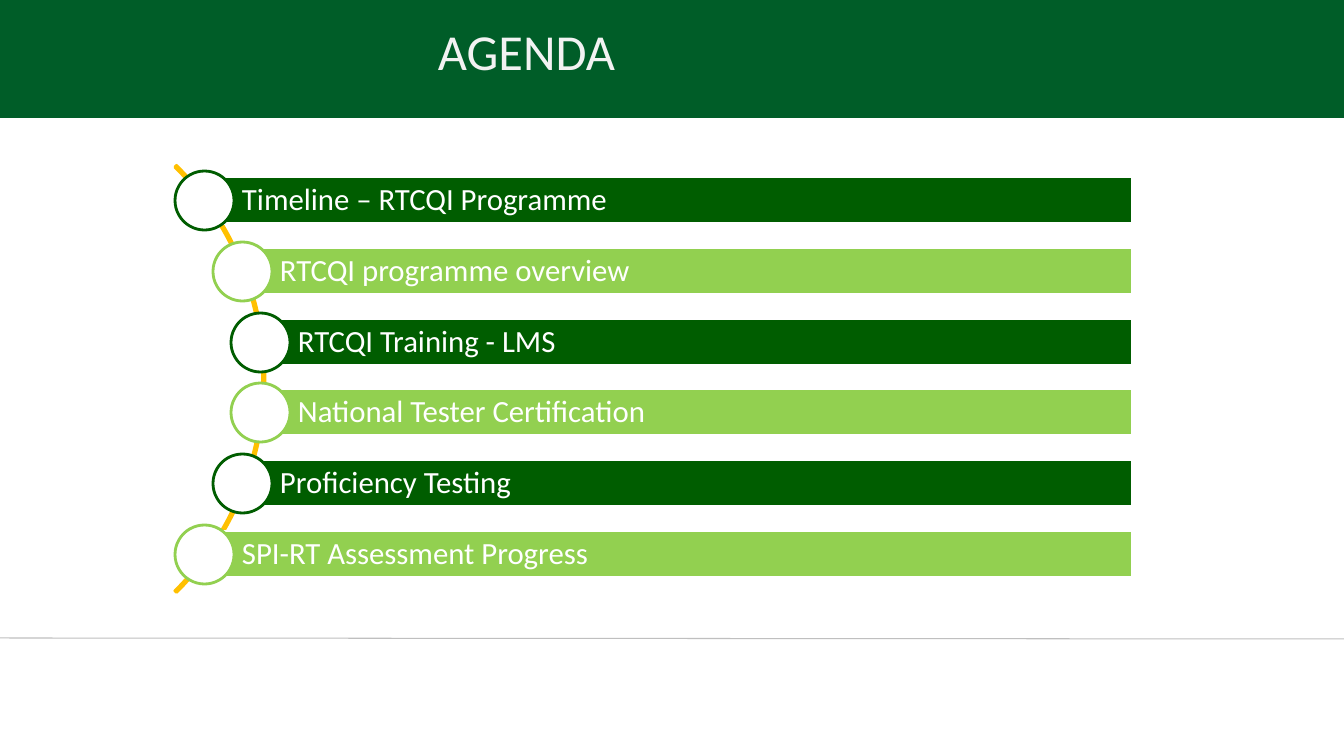
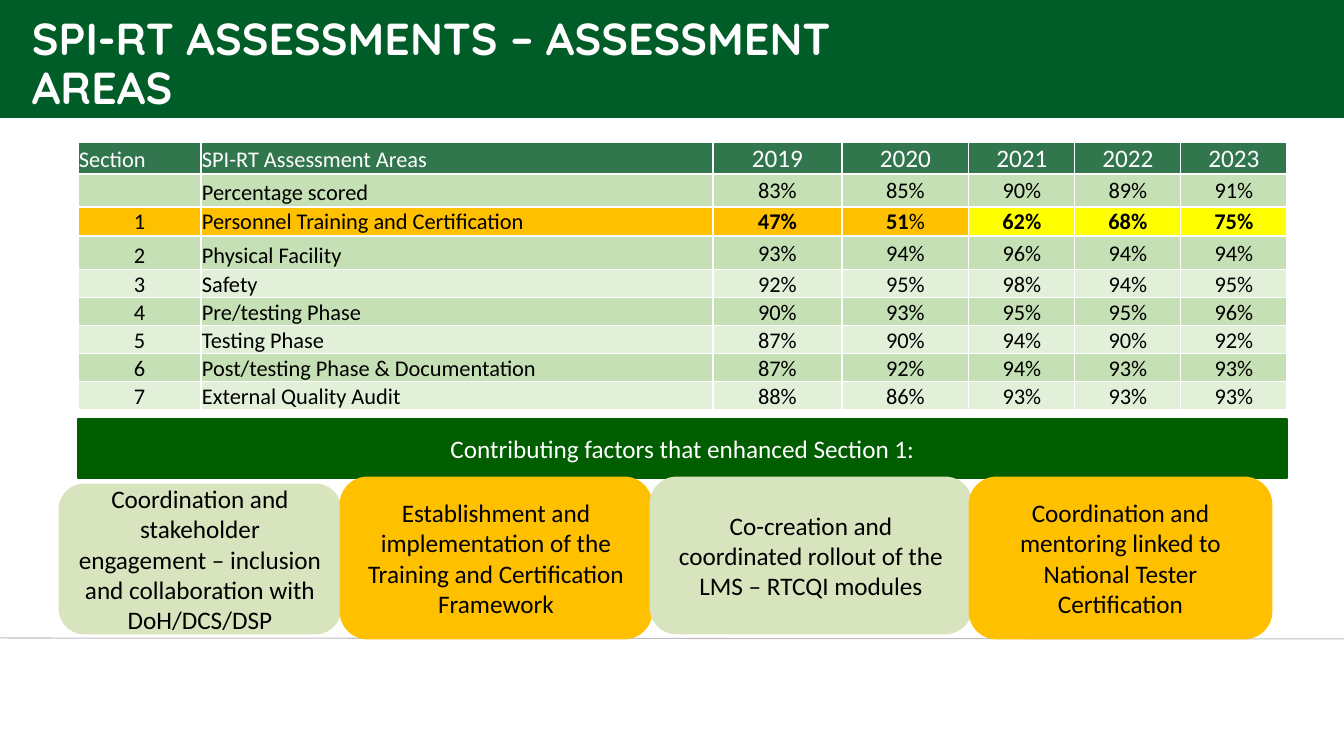
import dataclasses

import lxml.etree
import pptx
import pptx.dml.color
import pptx.enum.shapes
import pptx.enum.text
import pptx.oxml.ns
import pptx.util


@dataclasses.dataclass(frozen=True)
class Theme:
    # Colours
    band: str = "005D28"
    rule: str = "BFBFBF"
    dark: str = "005D00"
    light: str = "92D050"
    amber: str = "FFC000"
    yellow: str = "FFFF00"
    sage: str = "D7E4BD"
    header: str = "32764E"
    row_odd: str = "C5E0B4"
    row_even: str = "E2F0D9"
    white: str = "FFFFFF"
    black: str = "000000"
    off_white: str = "F2F2F2"
    # Fonts and type sizes
    body: str = "Calibri"
    display: str = "Quicksand"
    agenda_title: int = 36
    title: int = 32
    item: int = 22
    text: int = 18
    cell: int = 16


T = Theme()
PX = 12192000 / 1344
RGB = pptx.dml.color.RGBColor.from_string
MSO = pptx.enum.shapes.MSO_SHAPE
LEFT = pptx.enum.text.PP_ALIGN.LEFT
CENTER = pptx.enum.text.PP_ALIGN.CENTER
MIDDLE = pptx.enum.text.MSO_ANCHOR.MIDDLE
BOTTOM = pptx.enum.text.MSO_ANCHOR.BOTTOM
qn = pptx.oxml.ns.qn


def add_box(s, kind, box, fill=None, line=None):
    sp = s.shapes.add_shape(kind, *[round(v * PX) for v in box])
    sp.shadow.inherit = False
    if fill:
        sp.fill.solid()
        sp.fill.fore_color.rgb = RGB(fill)
    else:
        sp.fill.background()
    if line:
        sp.line.color.rgb = RGB(line)
        sp.line.width = pptx.util.Pt(2)
    else:
        sp.line.fill.background()
    return sp


def set_text(tf, text, size, color, align=LEFT, font=T.body, bold=False):
    tf.word_wrap = True
    p = tf.paragraphs[0]
    p.text = text
    p.alignment = align
    for r in p.runs:
        r.font.name = font
        r.font.size = pptx.util.Pt(size)
        r.font.bold = bold
        r.font.color.rgb = RGB(color)
    return p


prs = pptx.Presentation()
prs.slide_width = round(1344 * PX)
prs.slide_height = round(756 * PX)

# Shared band, footer rule and title
titles = [
    ("AGENDA", (-29, 15, 1111, 72), T.agenda_title, T.off_white, CENTER, T.body, False),
    ("SPI-RT ASSESSMENTS – ASSESSMENT AREAS", (22, 12, 918, 100), T.title, T.white,
     LEFT, T.display, True),
]
for text, box, size, color, align, font, bold in titles:
    s = prs.slides.add_slide(prs.slide_layouts[6])
    add_box(s, MSO.RECTANGLE, (0, 0, 1344, 118), T.band)
    rule = s.shapes.add_connector(pptx.enum.shapes.MSO_CONNECTOR.STRAIGHT,
                                  0, round(638 * PX), prs.slide_width, round(639 * PX))
    rule.line.color.rgb = RGB(T.rule)
    rule.line.width = pptx.util.Pt(0.75)
    lxml.etree.SubElement(rule._element.spPr, qn("a:effectLst"))
    title = s.shapes.add_textbox(*[round(v * PX) for v in box])
    p = set_text(title.text_frame, text, size, color, align, font, bold)
    if font == T.display:
        p.line_spacing = 0.9
agenda, areas = prs.slides

# Agenda: arc behind the items
arc = add_box(agenda, MSO.BLOCK_ARC, (-339, 77, 604, 604), line=T.amber)
for i, value in enumerate((189, 27, 0.004)):
    arc.adjustments[i] = value

# Agenda: bars with a circle at the left end
items = [
    (205, "Timeline – RTCQI Programme"),
    (243, "RTCQI programme overview"),
    (261, "RTCQI Training - LMS"),
    (261, "National Tester Certification"),
    (243, "Proficiency Testing"),
    (205, "SPI-RT Assessment Progress"),
]
for i, (x, text) in enumerate(items):
    y = 177 + round(i * 70.8)
    color = T.light if i % 2 else T.dark
    bar = add_box(agenda, MSO.RECTANGLE, (x, y, 1132 - x, 47), color, T.white)
    tf = bar.text_frame
    tf.vertical_anchor = MIDDLE
    tf.margin_left = round(37 * PX)
    tf.margin_right = tf.margin_top = tf.margin_bottom = round(6 * PX)
    set_text(tf, text, T.item, T.white).line_spacing = 0.9
    add_box(agenda, MSO.OVAL, (x - 30, y - 6, 59, 59), T.white, color)

# Assessment table
rows = [
    ("Section", "SPI-RT Assessment Areas", "2019", "2020", "2021", "2022", "2023"),
    ("", "Percentage scored", "83%", "85%", "90%", "89%", "91%"),
    ("1", "Personnel Training and Certification", "47%", "51%", "62%", "68%", "75%"),
    ("2", "Physical Facility", "93%", "94%", "96%", "94%", "94%"),
    ("3", "Safety", "92%", "95%", "98%", "94%", "95%"),
    ("4", "Pre/testing Phase", "90%", "93%", "95%", "95%", "96%"),
    ("5", "Testing Phase", "87%", "90%", "94%", "90%", "92%"),
    ("6", "Post/testing Phase & Documentation", "87%", "92%", "94%", "93%", "93%"),
    ("7", "External Quality Audit", "88%", "86%", "93%", "93%", "93%"),
]
widths = [123, 512, 129, 127, 106, 106, 106]
heights = [32, 33, 29, 34] + [28] * 5
highlight = 2
frame = areas.shapes.add_table(len(rows), len(widths), round(78 * PX), round(142 * PX),
                               round(sum(widths) * PX), round(sum(heights) * PX))
table = frame.table
for col, width in zip(table.columns, widths):
    col.width = round(width * PX)
for i, (values, height) in enumerate(zip(rows, heights)):
    table.rows[i].height = round(height * PX)
    for j, text in enumerate(values):
        cell = table.cell(i, j)
        cell.margin_left = cell.margin_right = cell.margin_top = round(PX)
        cell.margin_bottom = 0
        cell.vertical_anchor = MIDDLE if i and j > 1 else BOTTOM
        centred = j > 1 or (i and j == 0)
        p = set_text(cell.text_frame, text,
                     T.text if i == 0 and j > 1 else T.cell,
                     T.black if i else T.white,
                     CENTER if centred else LEFT,
                     bold=i == highlight and j > 1)

        # White grid lines
        tcPr = cell._tc.get_or_add_tcPr()
        for side in ("a:lnL", "a:lnR", "a:lnT", "a:lnB"):
            ln = lxml.etree.SubElement(tcPr, qn(side), w="12700")
            solid = lxml.etree.SubElement(ln, qn("a:solidFill"))
            lxml.etree.SubElement(solid, qn("a:srgbClr"), val=T.white)

        if i == 0:
            fill = T.header
        elif i == highlight:
            fill = T.yellow if j > 3 else T.amber
        else:
            fill = T.row_odd if i % 2 else T.row_even
        cell.fill.solid()
        cell.fill.fore_color.rgb = RGB(fill)

# The 2020 score of the highlighted row has a regular percent sign
p = set_text(table.cell(highlight, 3).text_frame, "51", T.cell, T.black, CENTER, bold=True)
r = p.add_run()
r.text = "%"
r.font.name = T.body
r.font.size = pptx.util.Pt(T.cell)
r.font.color.rgb = RGB(T.black)

# Contributing factors: heading bar and four cards
factors = [
    (MSO.RECTANGLE, (78, 419, 1209, 59), T.dark, T.white,
     "Contributing factors that enhanced Section 1:"),
    (MSO.ROUNDED_RECTANGLE, (60, 485, 280, 148), T.sage, T.black,
     "Coordination and stakeholder engagement – inclusion and collaboration with DoH/DCS/DSP"),
    (MSO.ROUNDED_RECTANGLE, (341, 478, 310, 160), T.amber, T.black,
     "Establishment and implementation of the Training and Certification Framework"),
    (MSO.ROUNDED_RECTANGLE, (651, 478, 320, 155), T.sage, T.black,
     "Co-creation and coordinated rollout of the LMS – RTCQI modules"),
    (MSO.ROUNDED_RECTANGLE, (970, 478, 301, 160), T.amber, T.black,
     "Coordination and mentoring linked to National Tester Certification"),
]
for kind, box, fill, color, text in factors:
    sp = add_box(areas, kind, box, fill, fill)
    sp.text_frame.vertical_anchor = MIDDLE
    set_text(sp.text_frame, text, T.text, color, CENTER)

prs.save("out.pptx")
